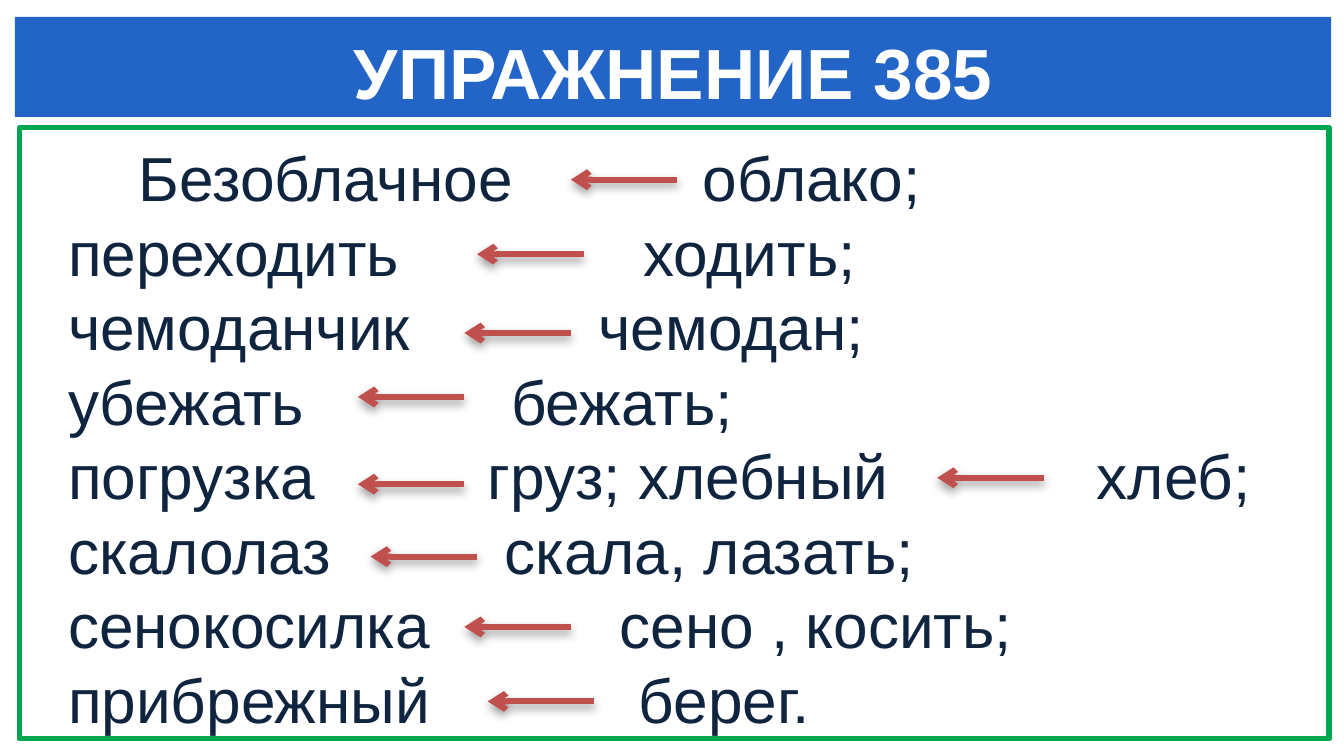
from dataclasses import dataclass

from lxml.etree import SubElement
from pptx import Presentation
from pptx.dml.color import RGBColor
from pptx.enum.shapes import MSO_CONNECTOR as Connector, MSO_SHAPE as Shape
from pptx.enum.text import MSO_ANCHOR as Anchor, PP_ALIGN as Align
from pptx.oxml import parse_xml
from pptx.oxml.ns import nsdecls, qn
from pptx.util import Inches, Pt

TITLE = "УПРАЖНЕНИЕ 385"
WORD_ROWS = [
    [(0.33, "Безоблачное"), (2.98, "облако;")],
    [(0, "переходить"), (2.70, "ходить;")],
    [(0, "чемоданчик"), (2.49, "чемодан;")],
    [(0, "убежать"), (2.08, "бежать;")],
    [(0, "погрузка"), (1.97, "груз; хлебный"), (4.83, "хлеб;")],
    [(0, "скалолаз"), (2.05, "скала, лазать;")],
    [(0, "сенокосилка"), (2.59, "сено , косить;")],
    [(0, "прибрежный"), (2.68, "берег.")],
]
ARROWS = [
    (0, 2.68, 0), (1, 2.24, 0), (2, 2.18, 0.02), (3, 1.68, -0.03),
    (4, 1.68, 0.03), (4, 4.40, 0), (5, 1.74, 0.02), (6, 2.18, 0), (7, 2.29, 0),
]


@dataclass(frozen=True)
class Theme:
    font: str = "Arial"
    title_size: float = 24
    word_size: float = 21
    row_pitch: float = 25.2
    frame_width: float = 1.8
    arrow_width: float = 2
    banner: RGBColor = RGBColor(0x23, 0x65, 0xC7)
    title: RGBColor = RGBColor(0xFF, 0xFF, 0xFF)
    frame: RGBColor = RGBColor(0x00, 0xA6, 0x50)
    word: RGBColor = RGBColor(0x0F, 0x24, 0x3E)
    arrow: RGBColor = RGBColor(0xC0, 0x50, 0x4D)


THEME = Theme()
WIDTH, HEIGHT = 6.31, 3.55
WORDS_LEFT, WORDS_TOP = 0.32, 0.655
ROW = THEME.row_pitch / 72
ARROW_LENGTH = 0.5
SHADOW = (
    f'<a:effectLst {nsdecls("a")}><a:outerShdw blurRad="40000" dist="20000" '
    'dir="5400000" rotWithShape="0"><a:srgbClr val="000000">'
    '<a:alpha val="38000"/></a:srgbClr></a:outerShdw></a:effectLst>'
)


def add_panel(slide, left, top, width, height):
    panel = slide.shapes.add_shape(
        Shape.RECTANGLE, *map(Inches, (left, top, width, height)))
    panel.shadow.inherit = False
    return panel


def clear_margins(text):
    text.margin_left = text.margin_right = text.margin_top = text.margin_bottom = 0


def add_text(paragraph, words, size, color, bold=False):
    run = paragraph.add_run()
    run.text = words
    run.font.name = THEME.font
    run.font.size = Pt(size)
    run.font.bold = bold
    run.font.color.rgb = color


def add_banner(slide):
    banner = add_panel(slide, 0.07, 0.08, 6.18, 0.47)
    banner.fill.solid()
    banner.fill.fore_color.rgb = THEME.banner
    banner.line.fill.background()
    text = banner.text_frame
    clear_margins(text)
    text.margin_top = Inches(0.04)
    text.vertical_anchor = Anchor.MIDDLE
    heading = text.paragraphs[0]
    heading.alignment = Align.CENTER
    add_text(heading, TITLE, THEME.title_size, THEME.title, bold=True)


def add_frame(slide):
    frame = add_panel(slide, 0.09, 0.6, 6.15, 2.87)
    frame.fill.background()
    frame.line.color.rgb = THEME.frame
    frame.line.width = Pt(THEME.frame_width)


def add_words(slide):
    box = slide.shapes.add_textbox(
        Inches(WORDS_LEFT), Inches(WORDS_TOP),
        Inches(WIDTH - 2 * WORDS_LEFT), Inches(len(WORD_ROWS) * ROW))
    text = box.text_frame
    text.word_wrap = True
    clear_margins(text)
    for index, row in enumerate(WORD_ROWS):
        line = text.add_paragraph() if index else text.paragraphs[0]
        line.alignment = Align.LEFT
        line.line_spacing = Pt(THEME.row_pitch)
        stops = SubElement(line._p.get_or_add_pPr(), qn("a:tabLst"))
        for start, words in row:
            if start:
                SubElement(stops, qn("a:tab"), pos=str(Inches(start)), algn="l")
            add_text(line, "\t" + words if start else words,
                     THEME.word_size, THEME.word)


def add_arrow(slide, row, tip, nudge):
    level = Inches(WORDS_TOP + (row + 0.54) * ROW + nudge)
    arrow = slide.shapes.add_connector(
        Connector.STRAIGHT, Inches(tip + ARROW_LENGTH), level, Inches(tip), level)
    arrow.line.color.rgb = THEME.arrow
    arrow.line.width = Pt(THEME.arrow_width)
    SubElement(arrow.line._get_or_add_ln(), qn("a:tailEnd"), type="arrow")
    arrow._element.spPr.append(parse_xml(SHADOW))


def main():
    deck = Presentation()
    deck.slide_width, deck.slide_height = Inches(WIDTH), Inches(HEIGHT)
    slide = deck.slides.add_slide(deck.slide_layouts[6])
    add_frame(slide)
    add_banner(slide)
    add_words(slide)
    for row, tip, nudge in ARROWS:
        add_arrow(slide, row, tip, nudge)
    deck.save("out.pptx")


if __name__ == "__main__":
    main()
